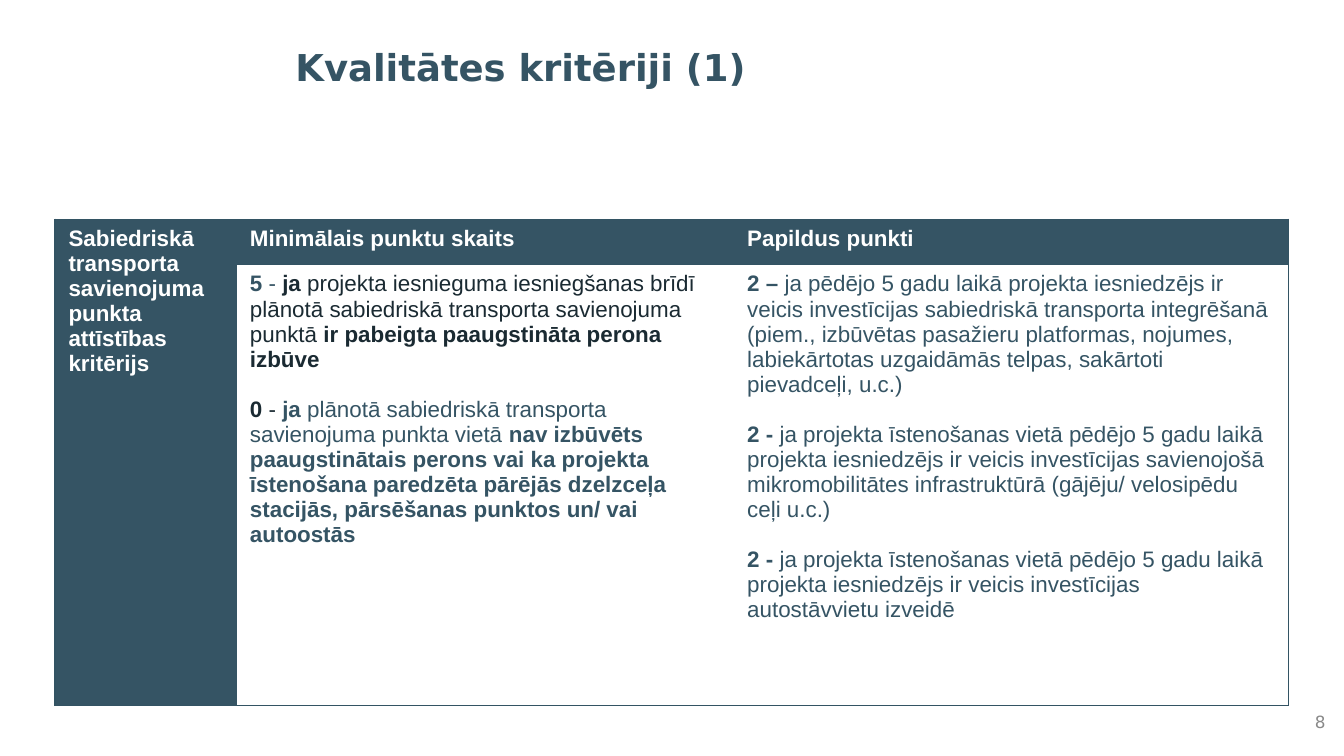
from typing import NamedTuple

from lxml.etree import SubElement
from pptx import Presentation
from pptx.dml.color import RGBColor
from pptx.enum.text import MSO_ANCHOR, PP_ALIGN
from pptx.oxml import parse_xml
from pptx.oxml.ns import nsdecls, qn
from pptx.util import Inches, Pt

WIDTH = 10
HEIGHT = WIDTH * 9 / 16
TEAL, DARK, WHITE, GREY, RULE = "355464", "1A2A32", "FFFFFF", "898989", "335363"
NO_STYLE = "{2D5ABB26-0587-4C30-8999-92F81FD0307C}"
COLUMNS = (1.35, 3.7, 4.13)
ROWS = (0.34, 3.28)


class Span(NamedTuple):
    """A stretch of text with one look."""
    text: str
    bold: bool = False
    color: str = TEAL


class Criterion(NamedTuple):
    """A table cell: its place, paragraphs, fill and ruled sides."""
    row: int
    column: int
    paragraphs: list[list[Span]]
    fill: str
    sides: str


class Label(NamedTuple):
    """A text box placed by shares of the slide's size."""
    left: float
    top: float
    width: float
    height: float
    text: str
    size: float
    color: str
    bold: bool
    align: PP_ALIGN
    anchor: MSO_ANCHOR


def heading(text: str) -> list[list[Span]]:
    """Return one bold white paragraph."""
    return [[Span(text, True, WHITE)]]


LABELS = [
    Label(0.21, 0.05, 0.67, 0.08, "Kvalitātes kritēriji (1)", 19.8, TEAL, True,
          PP_ALIGN.LEFT, MSO_ANCHOR.TOP),
    Label(0.937, 0.933, 0.059, 0.044, "8", 9, GREY, False,
          PP_ALIGN.RIGHT, MSO_ANCHOR.MIDDLE),
]

MINIMUM = [
    [Span("5", True), Span(" - "), Span("ja", True, DARK),
     Span(" projekta iesnieguma iesniegšanas brīdī plānotā sabiedriskā transporta "
          "savienojuma punktā ", False, DARK),
     Span("ir pabeigta paaugstināta perona izbūve", True, DARK)],
    [Span("0", True, DARK), Span(" - ", False, DARK), Span("ja", True),
     Span(" plānotā sabiedriskā transporta savienojuma punkta vietā "),
     Span("nav izbūvēts paaugstinātais perons vai ka projekta īstenošana paredzēta "
          "pārējās dzelzceļa stacijās, pārsēšanas punktos un/ vai autoostās", True)],
]

EXTRA = [
    [Span("2 – ", True),
     Span("ja pēdējo 5 gadu laikā projekta iesniedzējs ir veicis investīcijas "
          "sabiedriskā transporta integrēšanā (piem., izbūvētas pasažieru platformas, "
          "nojumes, labiekārtotas uzgaidāmās telpas, sakārtoti pievadceļi, u.c.)")],
    [Span("2 -", True),
     Span(" ja projekta īstenošanas vietā pēdējo 5 gadu laikā projekta iesniedzējs ir "
          "veicis investīcijas savienojošā mikromobilitātes infrastruktūrā (gājēju/ "
          "velosipēdu ceļi u.c.)")],
    [Span("2 -", True),
     Span(" ja projekta īstenošanas vietā pēdējo 5 gadu laikā projekta iesniedzējs ir "
          "veicis investīcijas autostāvvietu izveidē")],
]

CRITERIA = [
    Criterion(0, 0, heading("Sabiedriskā transporta savienojuma punkta attīstības "
                            "kritērijs"), TEAL, "LTB"),
    Criterion(1, 0, [], TEAL, "LB"),
    Criterion(0, 1, heading("Minimālais punktu skaits"), TEAL, "T"),
    Criterion(0, 2, heading("Papildus punkti"), TEAL, "RT"),
    Criterion(1, 1, MINIMUM, WHITE, "TB"),
    Criterion(1, 2, EXTRA, WHITE, "RTB"),
]


def rgb(color: str) -> RGBColor:
    """Turn a hex string into a colour."""
    return RGBColor.from_string(color)


def draw_label(slide, label: Label) -> None:
    """Draw a one-paragraph text box."""
    box = slide.shapes.add_textbox(
        Inches(label.left * WIDTH), Inches(label.top * HEIGHT),
        Inches(label.width * WIDTH), Inches(label.height * HEIGHT))
    frame = box.text_frame
    frame.word_wrap = True
    frame.vertical_anchor = label.anchor
    paragraph = frame.paragraphs[0]
    paragraph.text = label.text
    paragraph.alignment = label.align
    font = paragraph.font
    font.name, font.size, font.bold = "DejaVu Sans", Pt(label.size), label.bold
    font.color.rgb = rgb(label.color)


def rule_sides(cell, sides: str) -> None:
    """Rule the given sides of a cell and clear the others."""
    properties = cell._tc.get_or_add_tcPr()
    for position, side in enumerate("LRTB"):
        line = parse_xml(f'<a:ln{side} {nsdecls("a")} w="{Pt(0.75)}"/>')
        if side in sides:
            fill = SubElement(line, qn("a:solidFill"))
            SubElement(fill, qn("a:srgbClr"), val=RULE)
        else:
            SubElement(line, qn("a:noFill"))
        properties.insert(position, line)


def draw_criterion(table, criterion: Criterion) -> None:
    """Fill in one table cell."""
    cell = table.cell(criterion.row, criterion.column)
    cell.fill.solid()
    cell.fill.fore_color.rgb = rgb(criterion.fill)
    rule_sides(cell, criterion.sides)
    for index, spans in enumerate(criterion.paragraphs):
        frame = cell.text_frame
        paragraph = frame.add_paragraph() if index else frame.paragraphs[0]
        paragraph.space_before = Pt(13.4 if index else 0)
        paragraph.font.name, paragraph.font.size = "Arial", Pt(12)
        for span in spans:
            run = paragraph.add_run()
            run.text = span.text
            run.font.bold = span.bold
            run.font.color.rgb = rgb(span.color)


def draw_table(slide) -> None:
    """Draw the criteria table."""
    frame = slide.shapes.add_table(
        len(ROWS), len(COLUMNS), Inches(0.041 * WIDTH), Inches(0.29 * HEIGHT),
        Inches(sum(COLUMNS)), Inches(sum(ROWS)))
    table = frame.table
    table._tbl.tblPr.find(qn("a:tableStyleId")).text = NO_STYLE
    for column, width in zip(table.columns, COLUMNS):
        column.width = Inches(width)
    for row, height in zip(table.rows, ROWS):
        row.height = Inches(height)
    table.cell(0, 0).merge(table.cell(1, 0))
    for criterion in CRITERIA:
        draw_criterion(table, criterion)


def main() -> None:
    """Build the slide and save it."""
    presentation = Presentation()
    presentation.slide_width, presentation.slide_height = Inches(WIDTH), Inches(HEIGHT)
    slide = presentation.slides.add_slide(presentation.slide_layouts[6])
    for label in LABELS:
        draw_label(slide, label)
    draw_table(slide)
    presentation.save("out.pptx")


if __name__ == "__main__":
    main()
